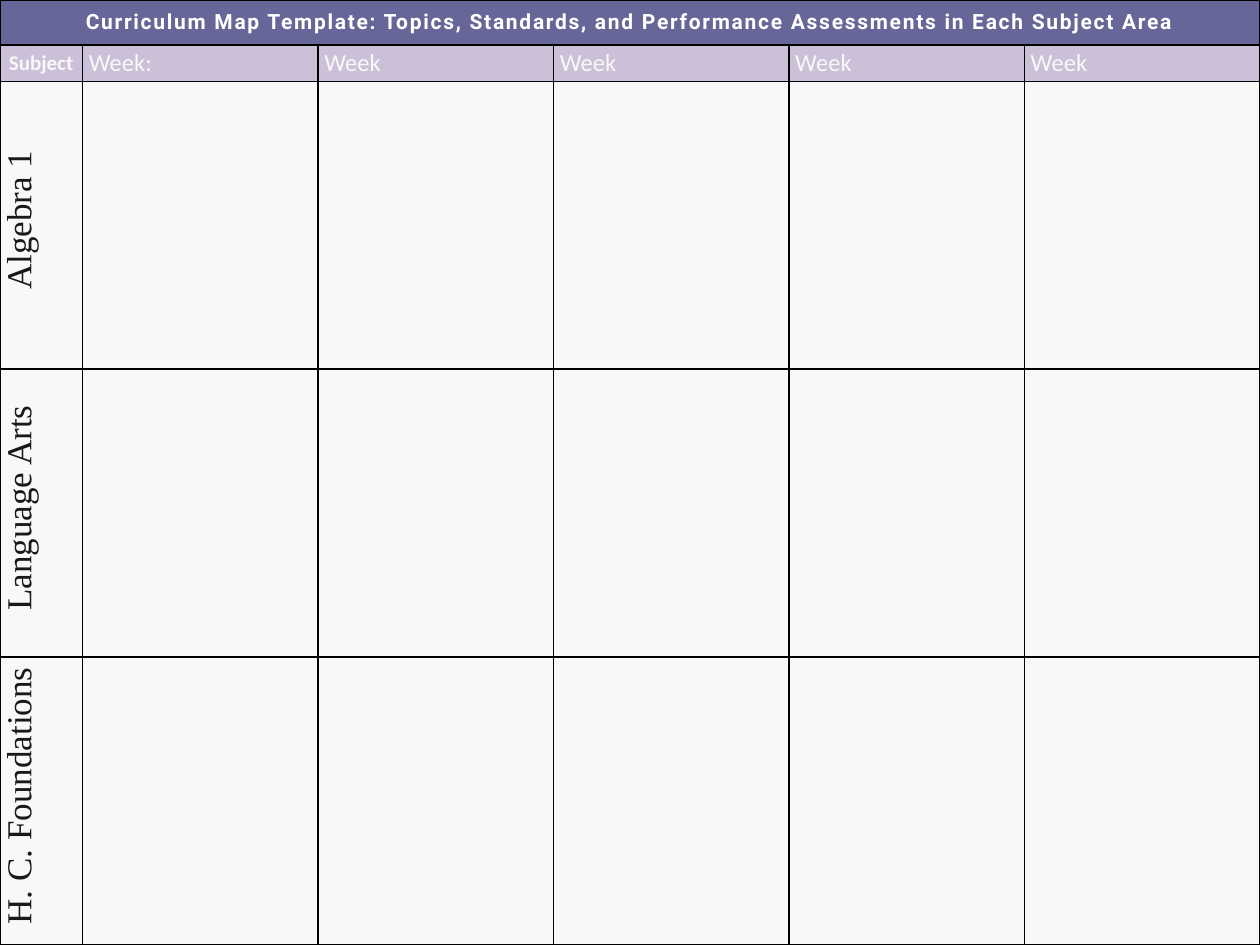
from lxml.etree import SubElement
from pptx import Presentation
from pptx.dml.color import RGBColor
from pptx.enum.text import MSO_ANCHOR as Anchor, PP_ALIGN as Align
from pptx.oxml.ns import qn
from pptx.util import Cm, Pt

TITLE = "Curriculum Map Template: Topics, Standards, and Performance Assessments in Each Subject Area"
HEADINGS = ["Subject", "Week:", "Week", "Week", "Week", "Week"]
SUBJECTS = ["Algebra 1", "Language Arts", "H. C. Foundations"]

NAVY = RGBColor(0x03, 0x1F, 0x73)
PURPLE = RGBColor(0x66, 0x66, 0x99)
LILAC = RGBColor(0xCC, 0xC0, 0xD9)
PALE = RGBColor(0xF8, 0xF8, 0xF8)
WHITE = RGBColor(0xFF, 0xFF, 0xFF)
INK = RGBColor(0x19, 0x19, 0x19)
BLACK = RGBColor(0x00, 0x00, 0x00)

WIDTH, HEIGHT = 25.4, 19.05
SUBJECT_WIDTH = 1.66
TITLE_HEIGHT, HEADING_HEIGHT = 0.91, 0.73
WEEK_WIDTH = (WIDTH - SUBJECT_WIDTH) / (len(HEADINGS) - 1)
SUBJECT_HEIGHT = (HEIGHT - TITLE_HEIGHT - HEADING_HEIGHT) / len(SUBJECTS)


def style_cell(cell, color):
    cell.margin_left = cell.margin_right = Cm(0.13)
    cell.margin_top = cell.margin_bottom = 0
    cell.vertical_anchor = Anchor.MIDDLE
    properties = cell._tc.get_or_add_tcPr()
    for side in ("lnL", "lnR", "lnT", "lnB"):
        line = SubElement(properties, qn(f"a:{side}"), w=str(Pt(1)))
        fill = SubElement(line, qn("a:solidFill"))
        SubElement(fill, qn("a:srgbClr"), val=str(BLACK))
    cell.fill.solid()
    cell.fill.fore_color.rgb = color


def write(cell, text, font, size, color, bold=False, align=Align.CENTER):
    para = cell.text_frame.paragraphs[0]
    para.alignment = align
    span = para.add_run()
    span.text = text
    span.font.name = font
    span.font.size = Pt(size)
    span.font.bold = bold
    span.font.color.rgb = color
    return para, span


deck = Presentation()
deck.slide_width, deck.slide_height = Cm(WIDTH), Cm(HEIGHT)
page = deck.slides.add_slide(deck.slide_layouts[6])
page.background.fill.solid()
page.background.fill.fore_color.rgb = NAVY

widths = [SUBJECT_WIDTH] + [WEEK_WIDTH] * (len(HEADINGS) - 1)
heights = [TITLE_HEIGHT, HEADING_HEIGHT] + [SUBJECT_HEIGHT] * len(SUBJECTS)
table = page.shapes.add_table(
    len(heights), len(widths), 0, 0, Cm(WIDTH), Cm(HEIGHT)).table
table.first_row = table.horz_banding = False
for column, width in zip(table.columns, widths):
    column.width = Cm(width)
row_colors = [PURPLE, LILAC] + [PALE] * len(SUBJECTS)
for row, height, color in zip(table.rows, heights, row_colors):
    row.height = Cm(height)
    for cell in row.cells:
        style_cell(cell, color)

title_cell = table.cell(0, 0)
title_cell.merge(table.cell(0, len(widths) - 1))
_, title_span = write(title_cell, TITLE, "Roboto", 12, WHITE, bold=True)
title_span.font._element.set("spc", "100")

for index, heading in enumerate(HEADINGS):
    first = index == 0
    write(table.cell(1, index), heading, "Calibri", 12 if first else 14, PALE,
          bold=first, align=Align.CENTER if first else Align.LEFT)

for index, subject in enumerate(SUBJECTS, start=2):
    cell = table.cell(index, 0)
    cell._tc.get_or_add_tcPr().set("vert", "vert270")
    para, _ = write(cell, subject, "Times New Roman", 20, INK)
    para._p.get_or_add_pPr().set("marL", str(Cm(0.2)))

deck.save("out.pptx")
